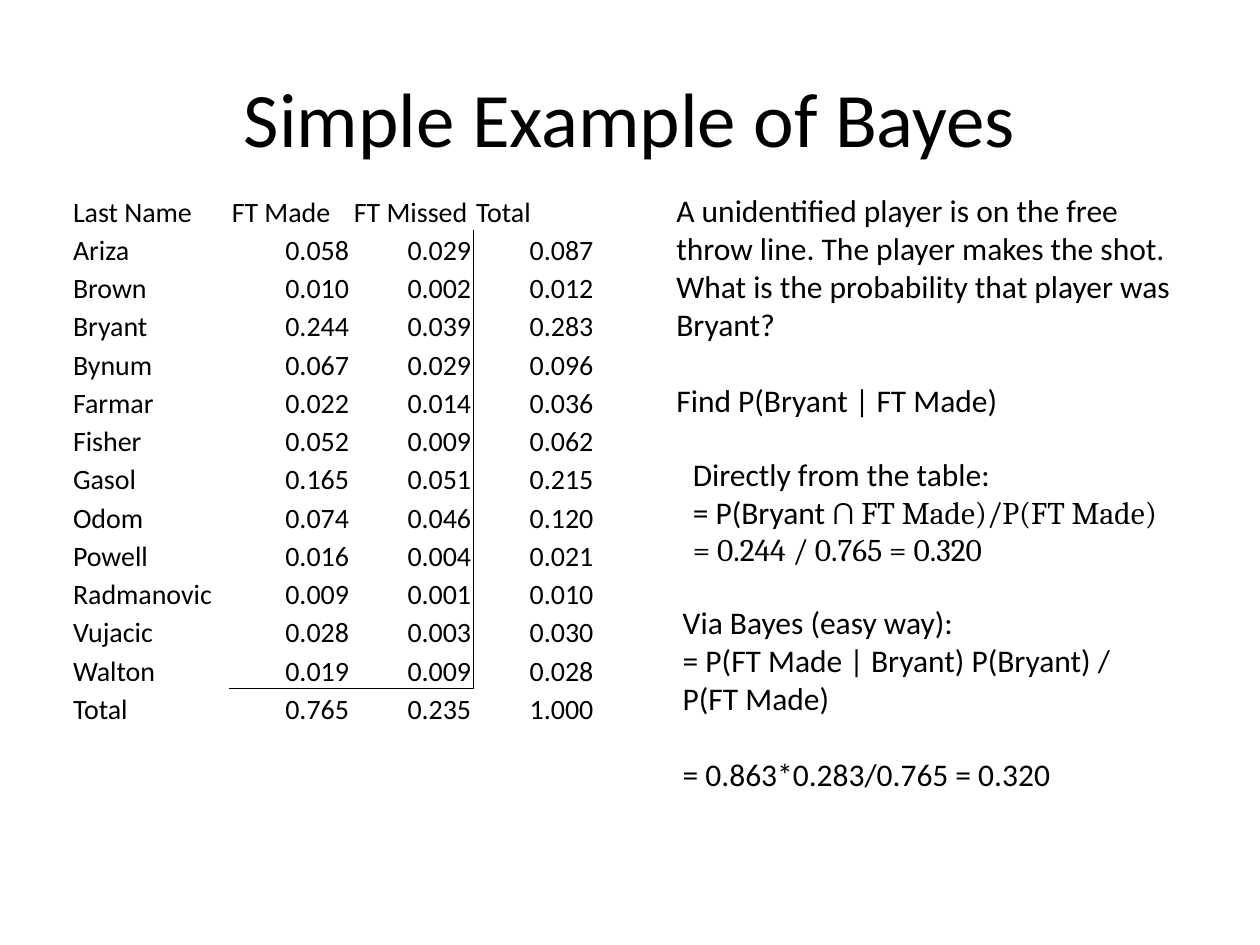
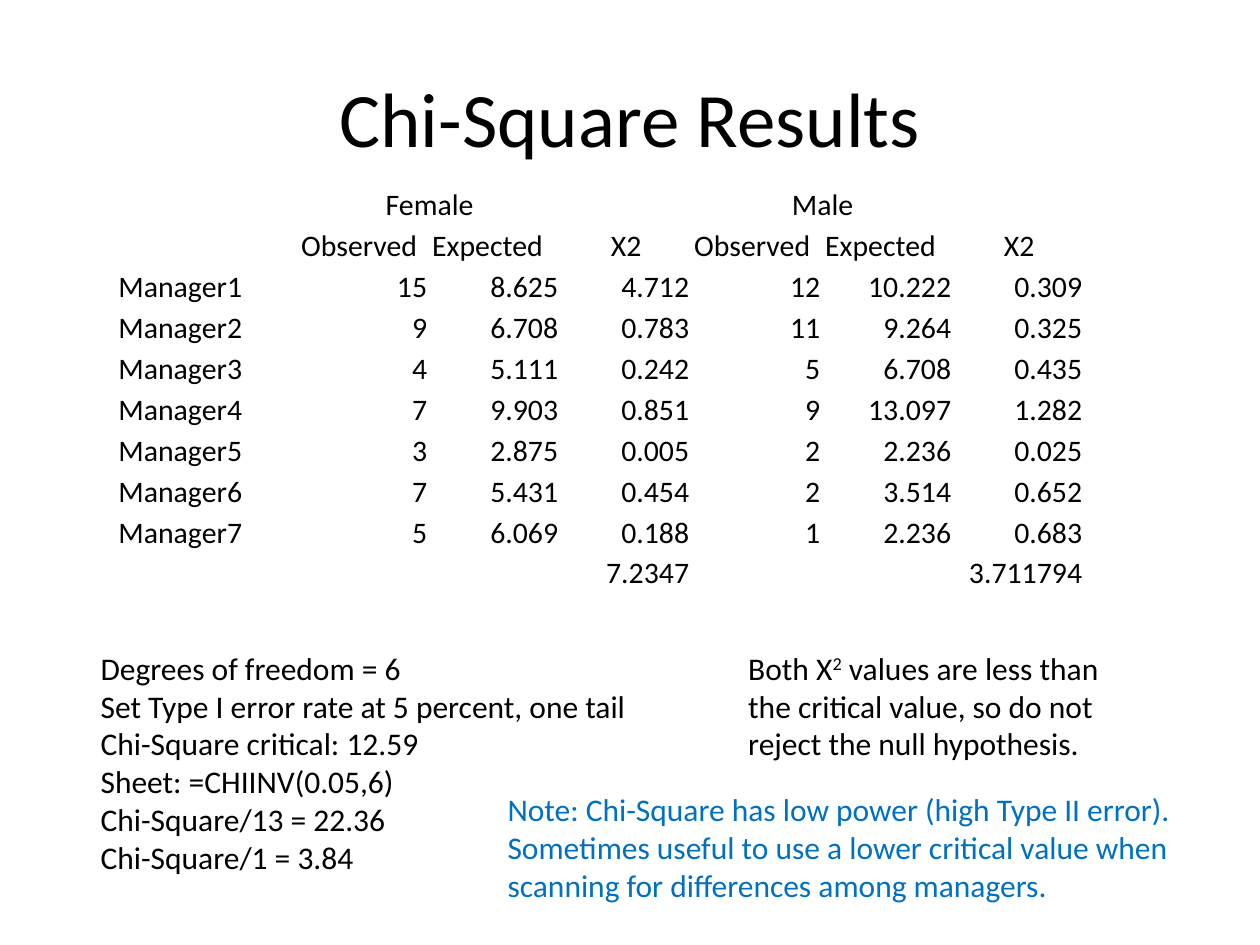
from lxml.etree import SubElement
from pptx import Presentation
from pptx.dml.color import RGBColor
from pptx.enum.text import MSO_ANCHOR, PP_ALIGN
from pptx.oxml.ns import qn
from pptx.util import Pt

PX = 9144  # EMU in one px, 100 px to the inch
SLIDE_SIZE = (1000, 750)
TITLE_BOX = (50, 30, 900, 125)
BLACK, BLUE = "000000", "0070C0"
FONT, MATH_FONT = "Calibri", "Cambria"
TITLE_SIZE, BODY_SIZE = 44, 18
BLANK_LINE = 22  # points
CELL_MARGINS = {"margin_left": 2, "margin_top": 2, "margin_right": 2, "margin_bottom": 0}
PLAIN_TABLE_STYLE = "{2D5ABB26-0587-4C30-8999-92F81FD0307C}"
ALIGNMENTS = {"L": PP_ALIGN.LEFT, "C": PP_ALIGN.CENTER, "R": PP_ALIGN.RIGHT}

# A paragraph is a string or a list of runs (text, format); "gap" leaves one line above.
FREE_THROWS = {
    "title": "Simple Example of Bayes",
    "table": {
        "at": (56, 152), "height": 425, "columns": [126] + [97] * 3, "size": 16,
        "headers": ["LLLL"], "merged": [],
        "rows": [
            ("Last Name", "FT Made", "FT Missed", "Total"),
            ("Ariza", "0.058", "0.029", "0.087"),
            ("Brown", "0.010", "0.002", "0.012"),
            ("Bryant", "0.244", "0.039", "0.283"),
            ("Bynum", "0.067", "0.029", "0.096"),
            ("Farmar", "0.022", "0.014", "0.036"),
            ("Fisher", "0.052", "0.009", "0.062"),
            ("Gasol", "0.165", "0.051", "0.215"),
            ("Odom", "0.074", "0.046", "0.120"),
            ("Powell", "0.016", "0.004", "0.021"),
            ("Radmanovic", "0.009", "0.001", "0.010"),
            ("Vujacic", "0.028", "0.003", "0.030"),
            ("Walton", "0.019", "0.009", "0.028"),
            ("Total", "0.765", "0.235", "1.000"),
        ],
        "totals_ruled": True,
    },
    "texts": [
        {"at": (527, 147, 430, 192), "paragraphs": [
            "A unidentified player is on the free throw line. The player makes the shot.",
            "What is the probability that player was Bryant?",
            [("Find P(Bryant | FT Made)", {"gap": True})],
        ]},
        {"at": (540, 356, 426, 101), "paragraphs": [
            "Directly from the table:",
            [("= P(Bryant ", {}), ("∩ FT Made)/P(FT Made)", {"name": MATH_FONT})],
            [("= 0.244 / 0.765 = 0.320", {"name": MATH_FONT})],
        ]},
        {"at": (532, 474, 403, 162), "paragraphs": [
            "Via Bayes (easy way):",
            "= P(FT Made | Bryant) P(Bryant) / P(FT Made)",
            [("= 0.863*0.283/0.765 = 0.320", {"gap": True})],
        ]},
    ],
}

CHI_SQUARE = {
    "title": "Chi-Square Results",
    "table": {
        "at": (92, 145), "height": 325, "columns": [145] + [104] * 6, "size": 17,
        "headers": ["LCCLCCL", "LLLCLLC"], "merged": [(0, 1, 2), (0, 4, 5)],
        "rows": [
            ("", "Female", "", "", "Male", "", ""),
            ("", "Observed", "Expected", "X2", "Observed", "Expected", "X2"),
            ("Manager1", "15", "8.625", "4.712", "12", "10.222", "0.309"),
            ("Manager2", "9", "6.708", "0.783", "11", "9.264", "0.325"),
            ("Manager3", "4", "5.111", "0.242", "5", "6.708", "0.435"),
            ("Manager4", "7", "9.903", "0.851", "9", "13.097", "1.282"),
            ("Manager5", "3", "2.875", "0.005", "2", "2.236", "0.025"),
            ("Manager6", "7", "5.431", "0.454", "2", "3.514", "0.652"),
            ("Manager7", "5", "6.069", "0.188", "1", "2.236", "0.683"),
            ("", "", "", "7.2347", "", "", "3.711794"),
        ],
        "totals_ruled": False,
    },
    "texts": [
        {"at": (70, 510, 442, 192), "paragraphs": [
            "Degrees of freedom = 6",
            "Set Type I error rate at 5 percent, one tail",
            "Chi-Square critical: 12.59",
            "Sheet: =CHIINV(0.05,6)",
            "Chi-Square/13 = 22.36",
            "Chi-Square/1 = 3.84",
        ]},
        {"at": (584, 510, 323, 101), "paragraphs": [
            [("Both X", {}), ("2", {"superscript": True}),
             (" values are less than the critical value, so do not reject the null hypothesis.", {})],
        ]},
        {"at": (393, 622, 573, 101), "color": BLUE, "paragraphs": [
            "Note: Chi-Square has low power (high Type II error).",
            "Sometimes useful to use a lower critical value when scanning for differences among managers.",
        ]},
    ],
}


def emu(lengths):
    return [round(length * PX) for length in lengths]


def rgb(color):
    return RGBColor.from_string(color)


def add_run(paragraph, text, size, color=BLACK, name=FONT, superscript=False):
    run = paragraph.add_run()
    run.text = text
    for attribute, value in {"size": Pt(size), "name": name}.items():
        setattr(run.font, attribute, value)
    run.font.color.rgb = rgb(color)
    if superscript:
        run.font._element.set("baseline", "30000")


def add_text(slide, at, paragraphs, color=BLACK, size=BODY_SIZE,
             align="L", anchor=MSO_ANCHOR.TOP):
    frame = slide.shapes.add_textbox(*emu(at)).text_frame
    frame.word_wrap = True
    frame.vertical_anchor = anchor
    for index, content in enumerate(paragraphs):
        paragraph = frame.add_paragraph() if index else frame.paragraphs[0]
        paragraph.alignment = ALIGNMENTS[align]
        runs = [(content, {})] if isinstance(content, str) else content
        for text, run_format in runs:
            options = dict(run_format)
            if options.pop("gap", False):
                paragraph.space_before = Pt(BLANK_LINE)
            add_run(paragraph, text, size, color, **options)


def totals_borders(row, column, last_row, last_column):
    """Name the cell sides on the rules that set off the total row and column."""
    sides = ""
    if 0 < row < last_row:
        sides += "L" * (column == last_column) + "R" * (column == last_column - 1)
    if 0 < column < last_column:
        sides += "T" * (row == last_row) + "B" * (row == last_row - 1)
    return sides


def add_border(cell, side):
    line = SubElement(cell._tc.get_or_add_tcPr(), qn(f"a:ln{side}"), w=str(Pt(0.5)))
    fill = SubElement(line, qn("a:solidFill"))
    SubElement(fill, qn("a:srgbClr"), val=BLACK)


def add_data_table(slide, at, height, columns, size, headers, merged, rows, totals_ruled):
    frame = slide.shapes.add_table(len(rows), len(columns), *emu((*at, sum(columns), height)))
    frame._element.find(".//" + qn("a:tableStyleId")).text = PLAIN_TABLE_STYLE
    table = frame.table
    table.first_row = table.horz_banding = False
    for column, width in zip(table.columns, emu(columns)):
        column.width = width
    for row in table.rows:
        row.height = round(height * PX / len(rows))
    body_alignment = "L" + "R" * (len(columns) - 1)
    for r, values in enumerate(rows):
        alignment = headers[r] if r < len(headers) else body_alignment
        for c, value in enumerate(values):
            cell = table.cell(r, c)
            for margin, length in CELL_MARGINS.items():
                setattr(cell, margin, length * PX)
            cell.vertical_anchor = MSO_ANCHOR.BOTTOM
            paragraph = cell.text_frame.paragraphs[0]
            paragraph.alignment = ALIGNMENTS[alignment[c]]
            add_run(paragraph, value, size)
            if totals_ruled:
                for side in totals_borders(r, c, len(rows) - 1, len(columns) - 1):
                    add_border(cell, side)
            cell.fill.background()
    for row, first, last in merged:
        table.cell(row, first).merge(table.cell(row, last))


def main():
    presentation = Presentation()
    presentation.slide_width, presentation.slide_height = emu(SLIDE_SIZE)
    for content in (FREE_THROWS, CHI_SQUARE):
        slide = presentation.slides.add_slide(presentation.slide_layouts[6])
        add_text(slide, TITLE_BOX, [content["title"]], size=TITLE_SIZE,
                 align="C", anchor=MSO_ANCHOR.MIDDLE)
        add_data_table(slide, **content["table"])
        for text in content["texts"]:
            add_text(slide, **text)
    presentation.save("out.pptx")


if __name__ == "__main__":
    main()
